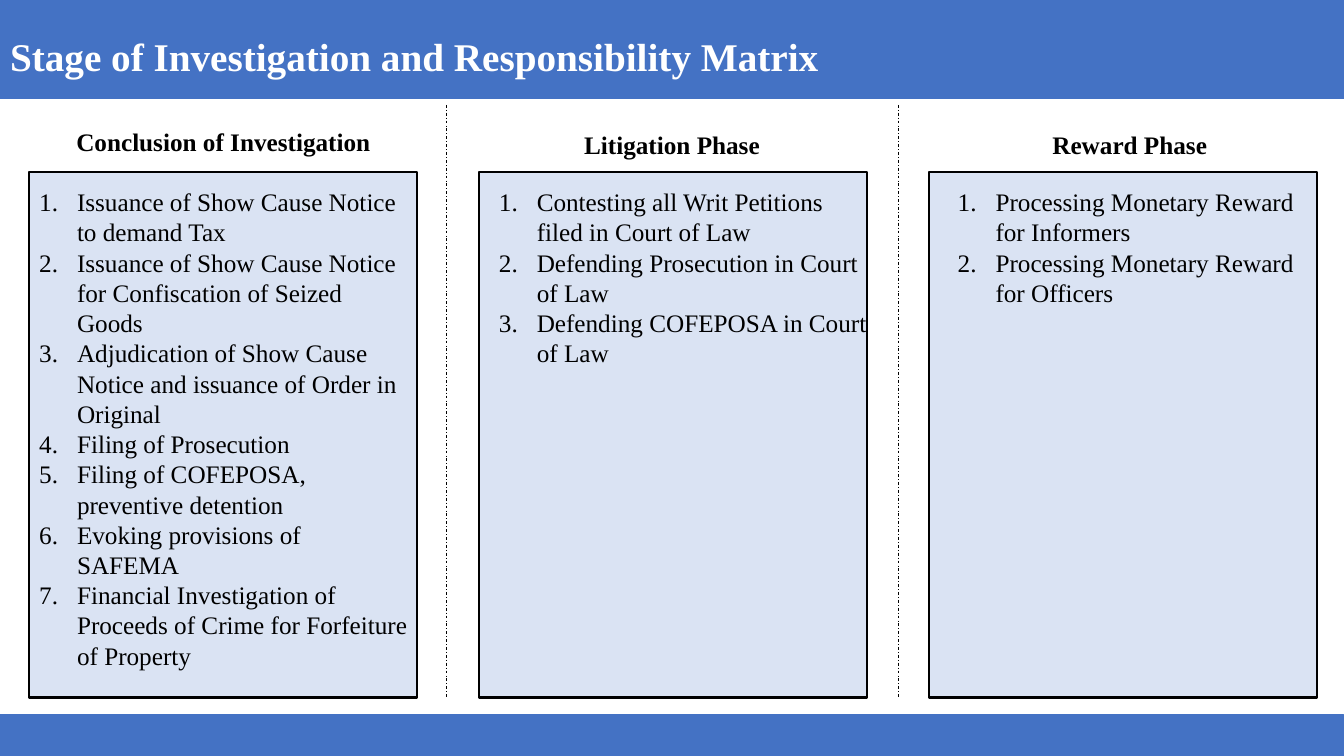
from lxml import etree
from pptx import Presentation
from pptx.dml.color import RGBColor
from pptx.enum import dml, shapes, text
from pptx.oxml import ns
from pptx.util import Inches, Pt

COLORS = {"blue": "4472C4", "pale": "DAE3F3", "black": "000000", "white": "FFFFFF"}
FONT = "Times New Roman"
PANEL = (3.85, 5.21)
PHASES = [
    (0.29, (0, -0.51), (0, 0.09), "Conclusion of Investigation", [
        "Issuance of Show Cause Notice to demand Tax",
        "Issuance of Show Cause Notice for Confiscation of Seized Goods",
        "Adjudication of Show Cause Notice and issuance of Order in Original",
        "Filing of Prosecution",
        "Filing of COFEPOSA, preventive detention",
        "Evoking provisions of SAFEMA",
        "Financial Investigation of Proceeds of Crime for Forfeiture of Property",
    ]),
    (4.75, (-0.01, -0.48), (0.1, 0.09), "Litigation Phase", [
        "Contesting all Writ Petitions filed in Court of Law",
        "Defending Prosecution in Court of Law",
        "Defending COFEPOSA in Court of Law",
    ]),
    (9.21, (0.07, -0.48), (0.19, 0.09), "Reward Phase", [
        "Processing Monetary Reward for Informers",
        "Processing Monetary Reward for Officers",
    ]),
]


def tint(name):
    return RGBColor.from_string(COLORS[name])


def write(par, words, size, color="black", bold=False):
    run = par.add_run()
    run.text = words
    font = run.font
    font.name, font.size, font.bold = FONT, Pt(size), bold
    font.color.rgb = tint(color)


def add_rect(slide, box, fill, line, width):
    rect = slide.shapes.add_shape(shapes.MSO_SHAPE.RECTANGLE, *map(Inches, box))
    rect.shadow.inherit = False
    rect.fill.solid()
    rect.fill.fore_color.rgb = tint(fill)
    rect.line.color.rgb = tint(line)
    rect.line.width = Pt(width)


def add_frame(slide, box):
    frame = slide.shapes.add_textbox(*map(Inches, box)).text_frame
    frame.word_wrap = True
    return frame


def add_title(slide, box):
    title = slide.shapes.title
    title.element.getparent().append(title.element)
    title.left, title.top, title.width, title.height = map(Inches, box)
    frame = title.text_frame
    frame.word_wrap = True
    frame.auto_size = text.MSO_AUTO_SIZE.NONE
    frame.vertical_anchor = text.MSO_ANCHOR.TOP
    par = frame.paragraphs[0]
    par.alignment = text.PP_ALIGN.LEFT
    par.line_spacing = 1.0
    write(par, "Stage of Investigation and Responsibility Matrix", 28, "white", True)


def add_list(slide, box, items):
    frame = add_frame(slide, box)
    for i, item in enumerate(items):
        par = frame.paragraphs[0] if i == 0 else frame.add_paragraph()
        write(par, item, 18)
        props = par._p.get_or_add_pPr()
        indent = Inches(0.375)
        props.set("marL", str(indent))
        props.set("indent", str(-indent))
        bullet = etree.SubElement(props, ns.qn("a:buAutoNum"))
        bullet.set("type", "arabicPeriod")


def add_phase(slide, box, head, body, name, items):
    left, top, width, height = box
    add_rect(slide, box, "pale", "black", 1.5)
    frame = add_frame(slide, (left + head[0], top + head[1], width, 0.4))
    par = frame.paragraphs[0]
    par.alignment = text.PP_ALIGN.CENTER
    write(par, name, 18, bold=True)
    place = (left + body[0], top + body[1], width, height - body[1])
    add_list(slide, place, items)


def add_rule(slide, x, top, end):
    ends = map(Inches, (x, top, x, end))
    rule = slide.shapes.add_connector(shapes.MSO_CONNECTOR.STRAIGHT, *ends)
    rule.line.color.rgb = tint("black")
    rule.line.width = Pt(0.5)
    rule.line.dash_style = dml.MSO_LINE.DASH_DOT
    etree.SubElement(rule.element.spPr, ns.qn("a:effectLst"))


def main():
    deck = Presentation()
    deck.slide_width, deck.slide_height = Inches(13.33), Inches(7.5)
    slide = deck.slides.add_slide(deck.slide_layouts[5])
    add_rect(slide, (0, 0, 13.33, 0.96), "blue", "blue", 3)
    add_rect(slide, (0, 7.1, 13.33, 0.4), "blue", "blue", 2.25)
    add_title(slide, (0, 0.27, 12.01, 0.57))
    for left, head, body, name, items in PHASES:
        add_phase(slide, (left, 1.71, *PANEL), head, body, name, items)
    for x in (4.43, 8.91):
        add_rule(slide, x, 1.04, 6.92)
    deck.save("out.pptx")


if __name__ == "__main__":
    main()
